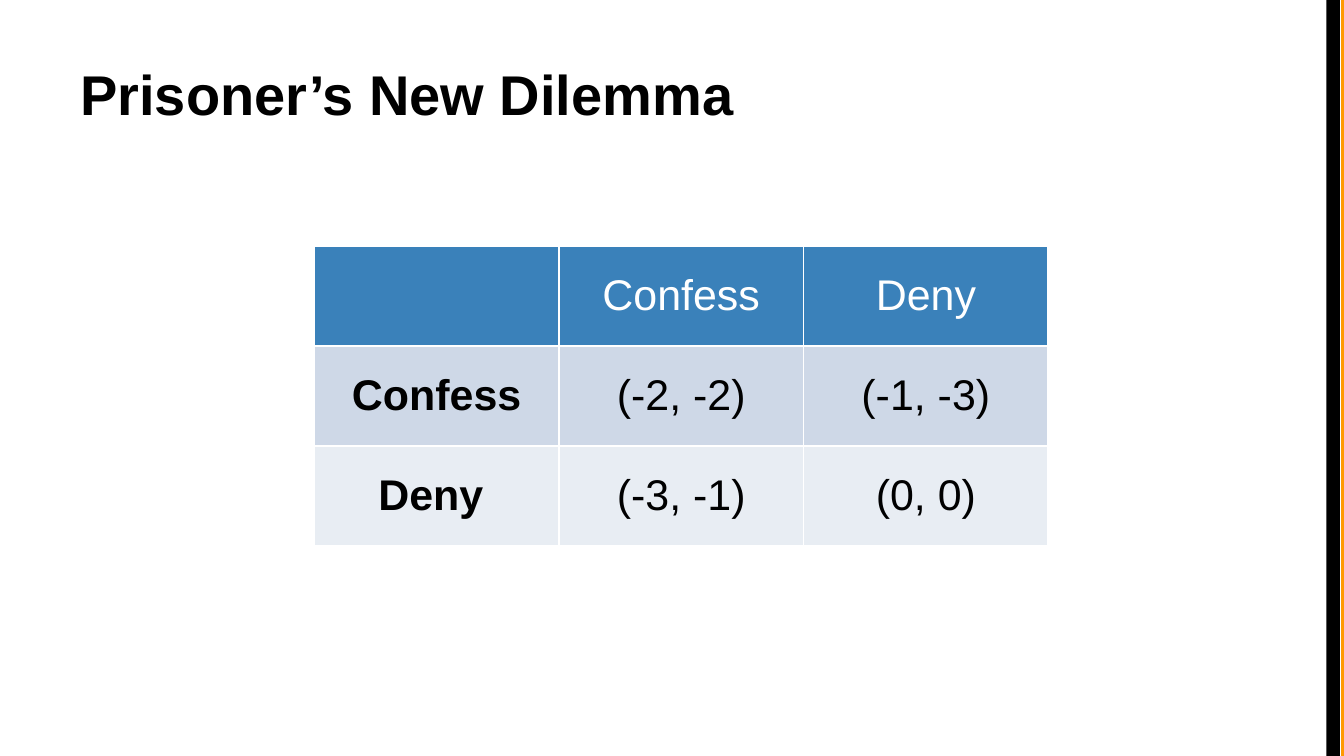
import pptx
import pptx.dml.color
import pptx.enum.shapes
import pptx.enum.text
import pptx.util

RGBColor = pptx.dml.color.RGBColor
Inches = pptx.util.Inches
ANCHOR = pptx.enum.text.MSO_ANCHOR
ALIGN = pptx.enum.text.PP_ALIGN

BLACK = RGBColor(0x00, 0x00, 0x00)
WHITE = RGBColor(0xFF, 0xFF, 0xFF)
ORANGE = RGBColor(0xFF, 0x99, 0x00)
HEADER_BLUE = RGBColor(0x3A, 0x81, 0xBA)
ROW_FILLS = [HEADER_BLUE, RGBColor(0xCE, 0xD8, 0xE7), RGBColor(0xE8, 0xED, 0xF3)]

WIDTH = 10
HEIGHT = WIDTH * 9 / 16
TABLE_WIDTH, TABLE_HEIGHT = 5.46, 2.23
PAYOFFS = [
    ["", "Confess", "Deny"],
    ["Confess", "(-2, -2)", "(-1, -3)"],
    ["Deny ", "(-3, -1)", "(0, 0)"],
]


def write_text(tf, text, size=23, color=BLACK, bold=False, align=ALIGN.LEFT):
    p = tf.paragraphs[0]
    p.alignment = align
    r = p.add_run()
    r.text = text
    r.font.name = "Arial"
    r.font.size = pptx.util.Pt(size)
    r.font.bold = bold
    r.font.color.rgb = color


def add_bar(s, left, color):
    sp = s.shapes.add_shape(
        pptx.enum.shapes.MSO_SHAPE.RECTANGLE,
        Inches(left), 0, Inches(0.1), Inches(HEIGHT))
    sp.shadow.inherit = False
    sp.fill.solid()
    sp.fill.fore_color.rgb = color
    sp.line.fill.background()


def add_title(s, text):
    margin = 0.05 * WIDTH
    sp = s.shapes.add_textbox(
        Inches(margin), Inches(0.22), Inches(WIDTH - 2 * margin), Inches(0.94))
    sp.line.color.rgb = WHITE
    sp.line.width = pptx.util.Pt(0.75)
    tf = sp.text_frame
    tf.word_wrap = True
    tf.vertical_anchor = ANCHOR.MIDDLE
    tf.margin_left = tf.margin_right = tf.margin_top = tf.margin_bottom = Inches(0.1)
    write_text(tf, text, size=30, bold=True)


def add_payoff_table(s, left, top, rows):
    table = s.shapes.add_table(
        len(rows), len(rows[0]), Inches(left), Inches(top),
        Inches(TABLE_WIDTH), Inches(TABLE_HEIGHT)).table
    for i, (row, fill) in enumerate(zip(rows, ROW_FILLS)):
        for j, text in enumerate(row):
            cell = table.cell(i, j)
            cell.fill.solid()
            cell.fill.fore_color.rgb = fill
            cell.vertical_anchor = ANCHOR.MIDDLE
            cell.margin_left = cell.margin_right = Inches(0.06)
            cell.margin_top = cell.margin_bottom = Inches(0.03)
            if text:
                write_text(cell.text_frame, text, color=BLACK if i else WHITE,
                           bold=j == 0, align=ALIGN.CENTER)


def main():
    prs = pptx.Presentation()
    prs.slide_width, prs.slide_height = Inches(WIDTH), Inches(HEIGHT)
    s = prs.slides.add_slide(prs.slide_layouts[6])
    add_bar(s, 9.98, ORANGE)
    add_bar(s, 9.87, BLACK)
    add_title(s, "Prisoner’s New Dilemma")
    add_payoff_table(s, 2.34, 1.83, PAYOFFS)
    prs.save("out.pptx")


if __name__ == "__main__":
    main()
